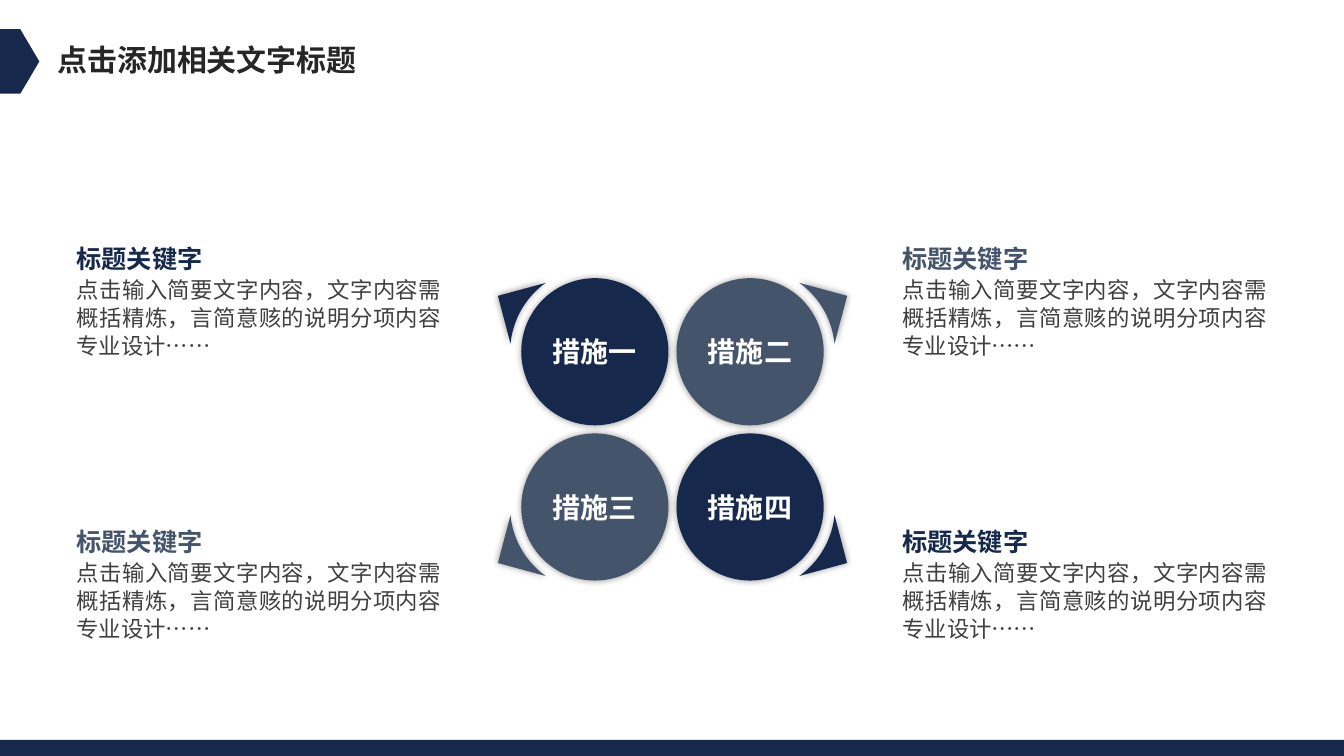
from dataclasses import dataclass
from math import cos, radians, sin

from lxml import etree
from pptx import Presentation
from pptx.dml.color import RGBColor
from pptx.enum.shapes import MSO_SHAPE
from pptx.enum.text import MSO_ANCHOR, PP_ALIGN
from pptx.oxml.ns import qn
from pptx.util import Inches, Pt

RECT, OVAL, PENTAGON = MSO_SHAPE.RECTANGLE, MSO_SHAPE.OVAL, MSO_SHAPE.PENTAGON
LEFT, CENTER, JUSTIFY = PP_ALIGN.LEFT, PP_ALIGN.CENTER, PP_ALIGN.JUSTIFY
TOP, MIDDLE = MSO_ANCHOR.TOP, MSO_ANCHOR.MIDDLE


@dataclass(frozen=True)
class Theme:
    font: str = "Noto Sans CJK SC"
    navy: str = "16294C"
    slate: str = "44546A"
    title: str = "262626"
    body: str = "404040"
    white: str = "FFFFFF"
    title_size: float = 21.4
    label_size: int = 20
    keyword_size: int = 18
    body_size: int = 16
    body_leading: int = 20


T = Theme()
TITLE = "点击添加相关文字标题"
KEYWORD = "标题关键字"
BODY = "点击输入简要文字内容，文字内容需概括精炼，言简意赅的说明分项内容专业设计……"
# Label, colour, column, row
MEASURES = [
    ("措施一", T.navy, 0, 0),
    ("措施二", T.slate, 1, 0),
    ("措施三", T.slate, 0, 1),
    ("措施四", T.navy, 1, 1),
]


def paint(sp, color):
    sp.fill.solid()
    sp.fill.fore_color.rgb = RGBColor.from_string(color)
    sp.line.fill.background()
    sp.shadow.inherit = False


def add_glow_shadow(sp):
    """Soft black shadow, 5 pt blur, 40 % opaque, no offset."""
    effects = sp._element.spPr.find(qn("a:effectLst"))
    shadow = etree.SubElement(effects, qn("a:outerShdw"), blurRad=str(Pt(5)),
                              dist="0", algn="ctr", rotWithShape="0")
    black = etree.SubElement(shadow, qn("a:srgbClr"), val="000000")
    etree.SubElement(black, qn("a:alpha"), val="40000")


def add_shape(s, kind, box, color):
    sp = s.shapes.add_shape(kind, *map(Inches, box))
    paint(sp, color)
    return sp


def write(sp, text, size, color, bold=False, align=LEFT, anchor=TOP, wrap=True):
    tf = sp.text_frame
    tf.word_wrap = wrap
    tf.vertical_anchor = anchor
    tf.margin_left = tf.margin_right = tf.margin_top = tf.margin_bottom = 0
    p = tf.paragraphs[0]
    p.text = text
    p.alignment = align
    p.font.size = Pt(size)
    p.font.bold = bold
    p.font.color.rgb = RGBColor.from_string(color)
    p.font.name = T.font
    etree.SubElement(p.font._element, qn("a:ea"), typeface=T.font)
    return p


def add_text(s, box, *args, **kwargs):
    return write(s.shapes.add_textbox(*map(Inches, box)), *args, **kwargs)


def add_header(s, x, y):
    tag = add_shape(s, PENTAGON, (x, y, 0.39, 0.64), T.navy)
    tag.adjustments[0] = 0.484
    add_text(s, (x + 0.57, y + 0.12, 3, 0.36), TITLE, T.title_size, T.title,
             bold=True, wrap=False)


def add_corner(s, cx, cy, side_x, side_y, color):
    """Arrow tip pointing outwards, its inner edge an arc around the circle."""
    def polar(radius, degrees):
        a = radians(degrees)
        return (Inches(cx + side_x * radius * cos(a)),
                Inches(cy + side_y * radius * sin(a)))

    arc = [polar(0.84, 5.5 + 49 * i / 24) for i in range(25)]
    builder = s.shapes.build_freeform(*polar(1.11, 30))
    builder.add_line_segments(arc, close=True)
    sp = builder.convert_to_shape()
    paint(sp, color)
    add_glow_shadow(sp)


def add_measures(s, x, y, size=1.46, pitch=1.54):
    # Corner tips lie behind the circles
    for _, color, col, row in MEASURES:
        add_corner(s, x + col * pitch + size / 2, y + row * pitch + size / 2,
                   2 * col - 1, 2 * row - 1, color)
    for label, color, col, row in MEASURES:
        box = (x + col * pitch, y + row * pitch, size, size)
        sp = add_shape(s, OVAL, box, color)
        add_glow_shadow(sp)
        write(sp, label, T.label_size, T.white, bold=True, align=CENTER, anchor=MIDDLE)


def add_note(s, x, y, color):
    add_text(s, (x, y, 2.04, 0.3), KEYWORD, T.keyword_size, color, bold=True)
    p = add_text(s, (x, y + 0.32, 3.62, 0.84), BODY, T.body_size, T.body, align=JUSTIFY)
    p.line_spacing = Pt(T.body_leading)


def main():
    prs = Presentation()
    prs.slide_width, prs.slide_height = Inches(13.33), Inches(7.5)
    s = prs.slides.add_slide(prs.slide_layouts[6])

    # Four measures in the centre, one note beside each
    add_measures(s, 5.17, 2.76)
    for _, color, col, row in MEASURES:
        add_note(s, 0.76 + col * 8.19, 2.41 + row * 2.81, color)

    # Header and footer bar
    add_header(s, 0, 0.29)
    add_shape(s, RECT, (0, 7.34, 13.33, 0.16), T.navy)

    prs.save("out.pptx")


if __name__ == "__main__":
    main()
